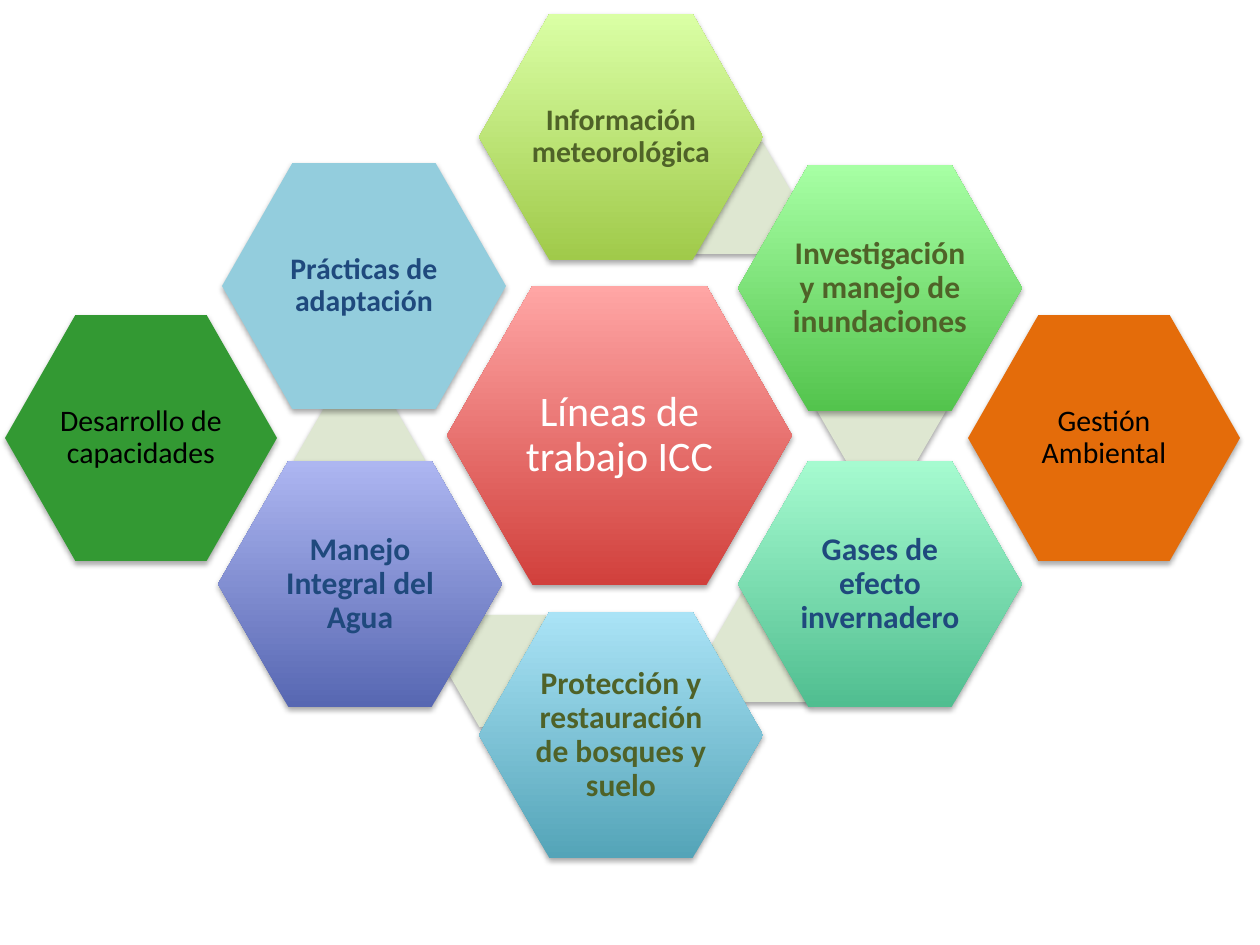
import dataclasses

import lxml.etree
import pptx
import pptx.dml.color
import pptx.enum.shapes
import pptx.enum.text
import pptx.oxml.ns
import pptx.util


@dataclasses.dataclass(frozen=True)
class Theme:
    font: str = "Calibri"
    white: str = "FFFFFF"
    black: str = "000000"
    olive: str = "4F6228"
    navy: str = "1F497D"
    link: str = "DEE7D1"
    core_size: int = 24
    petal_size: int = 18
    small_size: int = 17


THEME = Theme()
PX = 914400 / 126
CORE_SIZE = (345, 299)
PETAL_SIZE = (284, 246)
OUTER_SIZE = (272, 246)
LINK_SIZE = (131, 112)
MIDDLE_X, RIGHT_X = 479, 738
LOWER_Y, OUTER_Y = 461, 315

LINKS = [(664, 142), (816, 353), (711, 590), (447, 615), (294, 404)]

PETALS = [
    ("Información meteorológica", MIDDLE_X, 14, ("A0CA4A", "DAFFA5"), THEME.olive, THEME.small_size),
    ("Investigación y manejo de inundaciones", RIGHT_X, 165, ("53C44D", "A7FFA4"), THEME.olive, THEME.petal_size),
    ("Gases de efecto invernadero", RIGHT_X, LOWER_Y, ("50BE90", "A6FBD0"), THEME.navy, THEME.petal_size),
    ("Protección y restauración de bosques y suelo", MIDDLE_X, 612, ("54A4B8", "AAE3F6"), THEME.olive,
     THEME.petal_size),
    ("Manejo Integral del Agua", 218, LOWER_Y, ("5767B2", "ADB6F1"), THEME.navy, THEME.petal_size),
    ("Prácticas de adaptación", 222, 163, ("93CDDD",), THEME.navy, THEME.small_size),
]

OUTER = [
    ("Desarrollo de capacidades", 5, ("339933",)),
    ("Gestión Ambiental", 968, ("E46C0A",)),
]


def px(length):
    return pptx.util.Emu(round(length * PX))


def rgb(value):
    return pptx.dml.color.RGBColor.from_string(value)


def paint(shape, colors):
    if len(colors) == 1:
        shape.fill.solid()
        shape.fill.fore_color.rgb = rgb(colors[0])
        return
    shape.fill.gradient()
    shape.fill.gradient_angle = 90
    for stop, color in zip(shape.fill.gradient_stops, colors):
        stop.color.rgb = rgb(color)


def add_shadow(shape):
    shape.shadow.inherit = False
    name = pptx.oxml.ns.qn
    effects = shape.element.spPr.find(name("a:effectLst"))
    shadow = lxml.etree.SubElement(
        effects, name("a:outerShdw"), blurRad="40000", dist="23000", dir="5400000", rotWithShape="0")
    color = lxml.etree.SubElement(shadow, name("a:srgbClr"), val=THEME.black)
    lxml.etree.SubElement(color, name("a:alpha"), val="35000")


def add_hexagon(page, left, top, size, colors, slant=0.286):
    shape = page.shapes.add_shape(
        pptx.enum.shapes.MSO_SHAPE.HEXAGON, px(left), px(top), px(size[0]), px(size[1]))
    shape.adjustments[0] = slant
    paint(shape, colors)
    shape.line.fill.background()
    add_shadow(shape)
    return shape


def add_label(shape, text, color, size, bold=False):
    box = shape.text_frame
    box.word_wrap = True
    box.vertical_anchor = pptx.enum.text.MSO_ANCHOR.MIDDLE
    box.margin_left = box.margin_right = box.margin_top = box.margin_bottom = px(4)
    para = box.paragraphs[0]
    para.alignment = pptx.enum.text.PP_ALIGN.CENTER
    para.line_spacing = 0.9
    span = para.add_run()
    span.text = text
    span.font.name = THEME.font
    span.font.size = pptx.util.Pt(size)
    span.font.bold = bold
    span.font.color.rgb = rgb(color)


def main():
    """Build the hexagon diagram of the lines of work."""
    deck = pptx.Presentation()
    deck.slide_width, deck.slide_height = px(1260), px(945)
    page = deck.slides.add_slide(deck.slide_layouts[6])

    core = add_hexagon(page, 447, 286, CORE_SIZE, ("D1403C", "FFA6A5"))
    add_label(core, "Líneas de trabajo ICC", THEME.white, THEME.core_size)

    for left, top in LINKS:
        add_hexagon(page, left, top, LINK_SIZE, (THEME.link,), slant=0.289)

    for text, left, top, colors, ink, size in PETALS:
        petal = add_hexagon(page, left, top, PETAL_SIZE, colors)
        add_label(petal, text, ink, size, bold=True)

    for text, left, colors in OUTER:
        side = add_hexagon(page, left, OUTER_Y, OUTER_SIZE, colors)
        add_label(side, text, THEME.black, THEME.small_size)

    deck.save("out.pptx")


if __name__ == "__main__":
    main()
